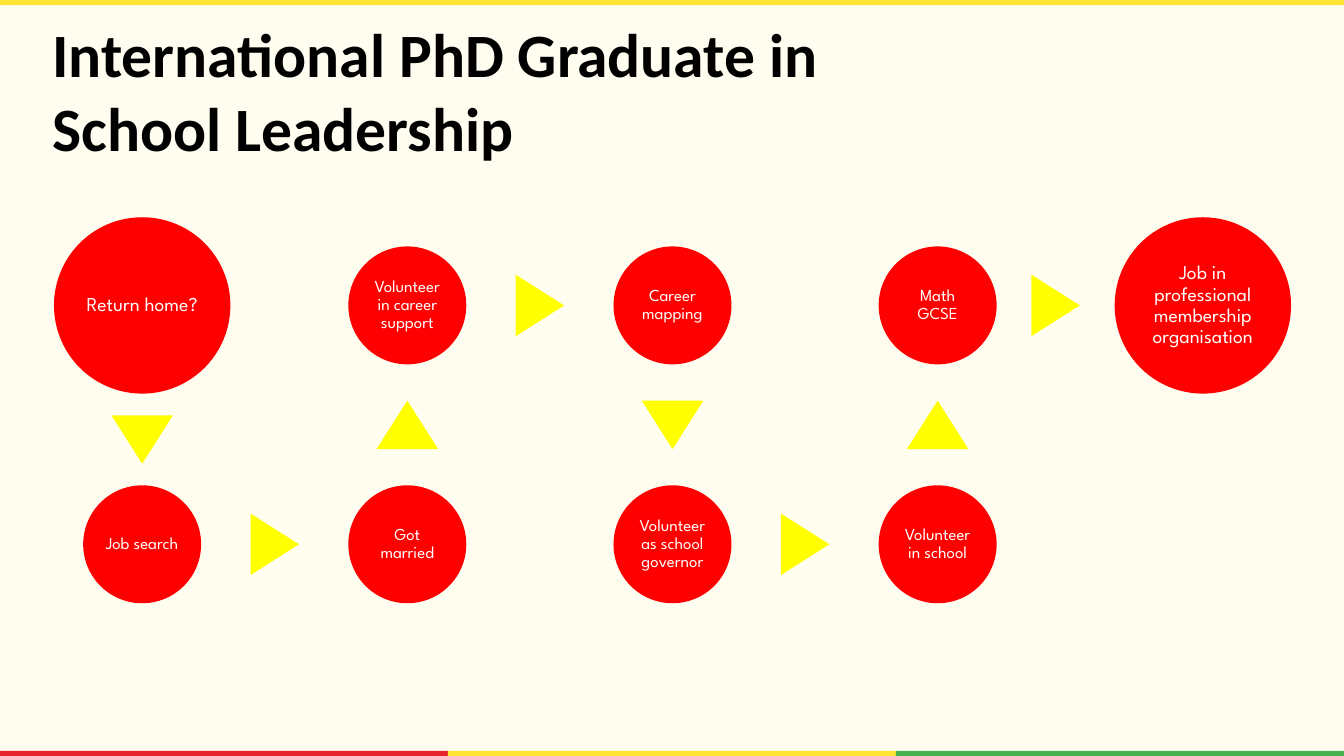
import pptx
import pptx.dml.color
import pptx.enum.shapes
import pptx.enum.text
import pptx.util

Inches = pptx.util.Inches
Pt = pptx.util.Pt
RGBColor = pptx.dml.color.RGBColor
Shape = pptx.enum.shapes.MSO_SHAPE
Anchor = pptx.enum.text.MSO_ANCHOR
Align = pptx.enum.text.PP_ALIGN
Fit = pptx.enum.text.MSO_AUTO_SIZE

CREAM = RGBColor(0xFF, 0xFD, 0xF0)
BLACK = RGBColor(0, 0, 0)
WHITE = RGBColor(0xFF, 0xFF, 0xFF)
RED = RGBColor(0xFF, 0, 0)
YELLOW = RGBColor(0xFF, 0xFF, 0)
CRIMSON = RGBColor(0xE7, 0x24, 0x2D)
GOLD = RGBColor(0xFF, 0xE4, 0x33)
GREEN = RGBColor(0x45, 0xB1, 0x4F)

WIDTH, HEIGHT, BAND = 13.33, 7.5, 0.05
LEFT, STEP = 1.41, 2.63
ROWS = (3.03, 5.4)
BIG, SMALL = 1.75, 1.17

# Column, row, diameter, text size and label, in the order of the path
STAGES = [
    (0, 0, BIG, 14, "Return home?"),
    (0, 1, SMALL, 12, "Job search"),
    (1, 1, SMALL, 12, "Got married"),
    (1, 0, SMALL, 12, "Volunteer in career support"),
    (2, 0, SMALL, 12, "Career mapping"),
    (2, 1, SMALL, 12, "Volunteer as school governor"),
    (3, 1, SMALL, 12, "Volunteer in school"),
    (3, 0, SMALL, 12, "Math GCSE"),
    (4, 0, BIG, 14, "Job in professional membership organisation"),
]


class Board:
    """Draws styled elements on one slide."""

    def __init__(self, slide):
        self.slide = slide
        back = slide.background.fill
        back.solid()
        back.fore_color.rgb = CREAM

    def shape(self, kind, left, top, width, height, color):
        item = self.slide.shapes.add_shape(
            kind, Inches(left), Inches(top), Inches(width), Inches(height))
        item.shadow.inherit = False
        item.fill.solid()
        item.fill.fore_color.rgb = color
        item.line.fill.background()
        return item

    def label(self, item, text, font, size, color, inset=0, bold=False):
        frame = item.text_frame
        frame.text = text
        frame.word_wrap = True
        frame.vertical_anchor = Anchor.MIDDLE
        frame.margin_left = frame.margin_right = Inches(inset)
        frame.margin_top = frame.margin_bottom = Inches(inset)
        for run in frame.paragraphs[0].runs:
            run.font.name = font
            run.font.size = Pt(size)
            run.font.bold = bold
            run.font.color.rgb = color
        return frame

    def title(self, text):
        box = self.slide.shapes.add_textbox(
            Inches(0.52), Inches(0.52), Inches(12.28), Inches(0.74))
        frame = self.label(box, text, "Calibri", 44, BLACK, bold=True)
        frame.auto_size = Fit.SHAPE_TO_FIT_TEXT

    def circle(self, x, y, size, points, text):
        item = self.shape(Shape.OVAL, x - size / 2, y - size / 2, size, size, RED)
        frame = self.label(item, text, "League Spartan", points, WHITE, 0.02)
        frame.paragraphs[0].alignment = Align.CENTER
        frame.paragraphs[0].line_spacing = 0.9

    def arrow(self, x, y, angle):
        width, height = 0.61, 0.48
        item = self.shape(Shape.ISOSCELES_TRIANGLE, x - width / 2,
                          y - height / 2, width, height, YELLOW)
        item.rotation = angle


def middle(start, end, first, second):
    """Centre of the gap between two circles along one axis."""
    sign = (end > start) - (end < start)
    return (start + end + sign * (first - second) / 2) / 2


def main():
    deck = pptx.Presentation()
    deck.slide_width, deck.slide_height = Inches(WIDTH), Inches(HEIGHT)
    board = Board(deck.slides.add_slide(deck.slide_layouts[6]))

    third = WIDTH / 3
    for index, color in enumerate((CRIMSON, GOLD, GREEN)):
        board.shape(Shape.RECTANGLE, index * third, HEIGHT - BAND, third, BAND, color)
    board.shape(Shape.RECTANGLE, 0, 0, WIDTH, BAND, GOLD)
    board.title("International PhD Graduate in \vSchool Leadership")

    last = None
    for column, row, size, points, text in STAGES:
        x, y = LEFT + column * STEP, ROWS[row]
        if last:
            old_x, old_y, old_size = last
            angle = 90 if x > old_x else 180 if y > old_y else 0
            board.arrow(middle(old_x, x, old_size, size),
                        middle(old_y, y, old_size, size), angle)
        board.circle(x, y, size, points, text)
        last = x, y, size

    deck.save("out.pptx")


if __name__ == "__main__":
    main()
